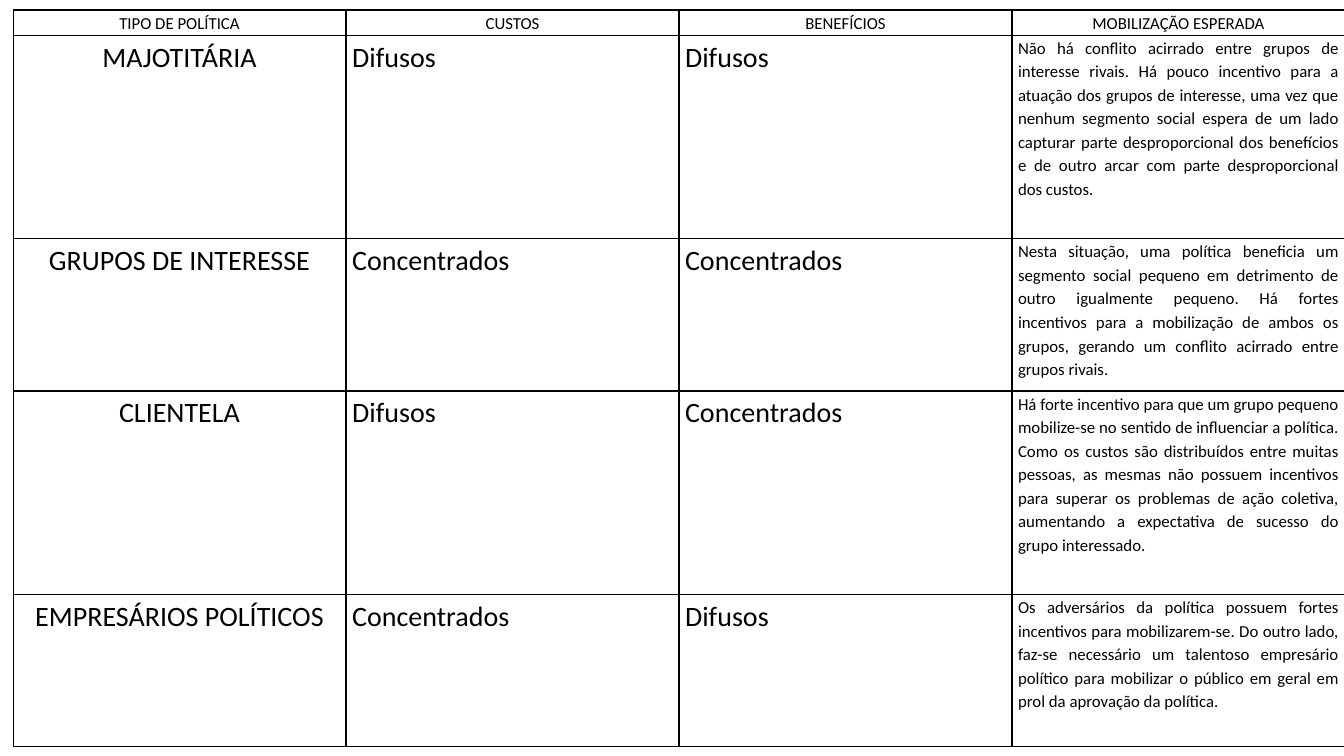
from lxml import etree
from pptx import Presentation
from pptx.dml.color import RGBColor
from pptx.enum.text import PP_ALIGN
from pptx.oxml.ns import qn
from pptx.util import Inches, Pt

CENTER = PP_ALIGN.CENTER
JUSTIFY = PP_ALIGN.JUSTIFY
BLACK = RGBColor(0, 0, 0)
WHITE = RGBColor(255, 255, 255)

HEADS = ["TIPO DE POLÍTICA", "CUSTOS", "BENEFÍCIOS", "MOBILIZAÇÃO ESPERADA"]
POLICIES = [
    ("MAJOTITÁRIA", "Difusos", "Difusos",
     "Não há conflito acirrado entre grupos de interesse rivais. Há pouco "
     "incentivo para a atuação dos grupos de interesse, uma vez que nenhum "
     "segmento social espera de um lado capturar parte desproporcional dos "
     "benefícios e de outro arcar com parte desproporcional dos custos."),
    ("GRUPOS DE INTERESSE", "Concentrados", "Concentrados",
     "Nesta situação, uma política beneficia um segmento social pequeno em "
     "detrimento de outro igualmente pequeno. Há fortes incentivos para a "
     "mobilização de ambos os grupos, gerando um conflito acirrado entre "
     "grupos rivais."),
    ("CLIENTELA", "Difusos", "Concentrados",
     "Há forte incentivo para que um grupo pequeno mobilize-se no sentido de "
     "influenciar a política. Como os custos são distribuídos entre muitas "
     "pessoas, as mesmas não possuem incentivos para superar os problemas de "
     "ação coletiva, aumentando a expectativa de sucesso do grupo interessado."),
    ("EMPRESÁRIOS POLÍTICOS", "Concentrados", "Difusos",
     "Os adversários da política possuem fortes incentivos para "
     "mobilizarem-se. Do outro lado, faz-se necessário um talentoso "
     "empresário político para mobilizar o público em geral em prol da "
     "aprovação da política."),
]
HEIGHTS = [0.25, 2.02, 1.51, 2.02, 1.51]


class Page:
    font = "Calibri"
    small = Pt(12)
    large = Pt(20)
    rule = Pt(1)
    pad = Inches(0.06)

    def __init__(self, deck):
        self.slide = deck.slides.add_slide(deck.slide_layouts[6])

    def border(self, cell):
        props = cell._tc.get_or_add_tcPr()
        for side in ("lnL", "lnR", "lnT", "lnB"):
            line = etree.SubElement(props, qn(f"a:{side}"), w=str(self.rule))
            fill = etree.SubElement(line, qn("a:solidFill"))
            etree.SubElement(fill, qn("a:srgbClr"), val=str(BLACK))

    def entry(self, cell, text, size, align):
        self.border(cell)
        cell.fill.solid()
        cell.fill.fore_color.rgb = WHITE
        cell.margin_left = cell.margin_right = self.pad
        cell.margin_top = cell.margin_bottom = 0
        para = cell.text_frame.paragraphs[0]
        para.alignment = align
        para.line_spacing = 1.15
        para.space_after = Pt(10)
        run = para.add_run()
        run.text = text
        run.font.name = self.font
        run.font.size = size
        run.font.color.rgb = BLACK

    def table(self, rows, heights, left, top, width):
        count = len(rows[0])
        grid = self.slide.shapes.add_table(
            len(rows), count, Inches(left), Inches(top),
            Inches(width), Inches(sum(heights))).table
        grid.first_row = grid.horz_banding = False
        for r, (row, height) in enumerate(zip(rows, heights)):
            grid.rows[r].height = Inches(height)
            for c, text in enumerate(row):
                size = self.small if r == 0 or c == count - 1 else self.large
                align = CENTER if r == 0 or c == 0 else JUSTIFY
                self.entry(grid.cell(r, c), text, size, align)


def main():
    deck = Presentation()
    deck.slide_width = Inches(13.33)
    deck.slide_height = Inches(7.5)
    page = Page(deck)
    page.table([HEADS, *POLICIES], HEIGHTS, 0.13, 0.1, 13.21)
    deck.save("out.pptx")


if __name__ == "__main__":
    main()
